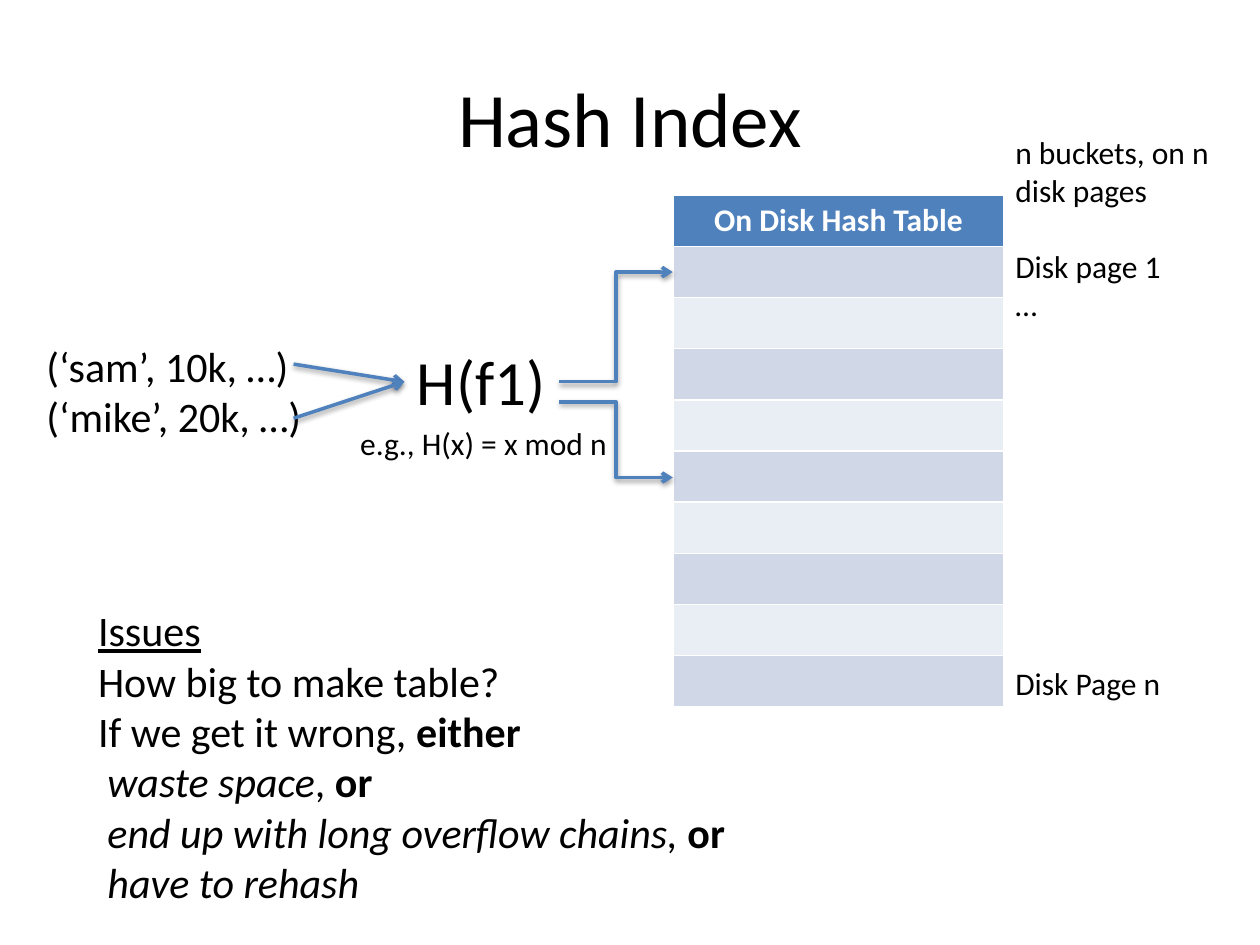
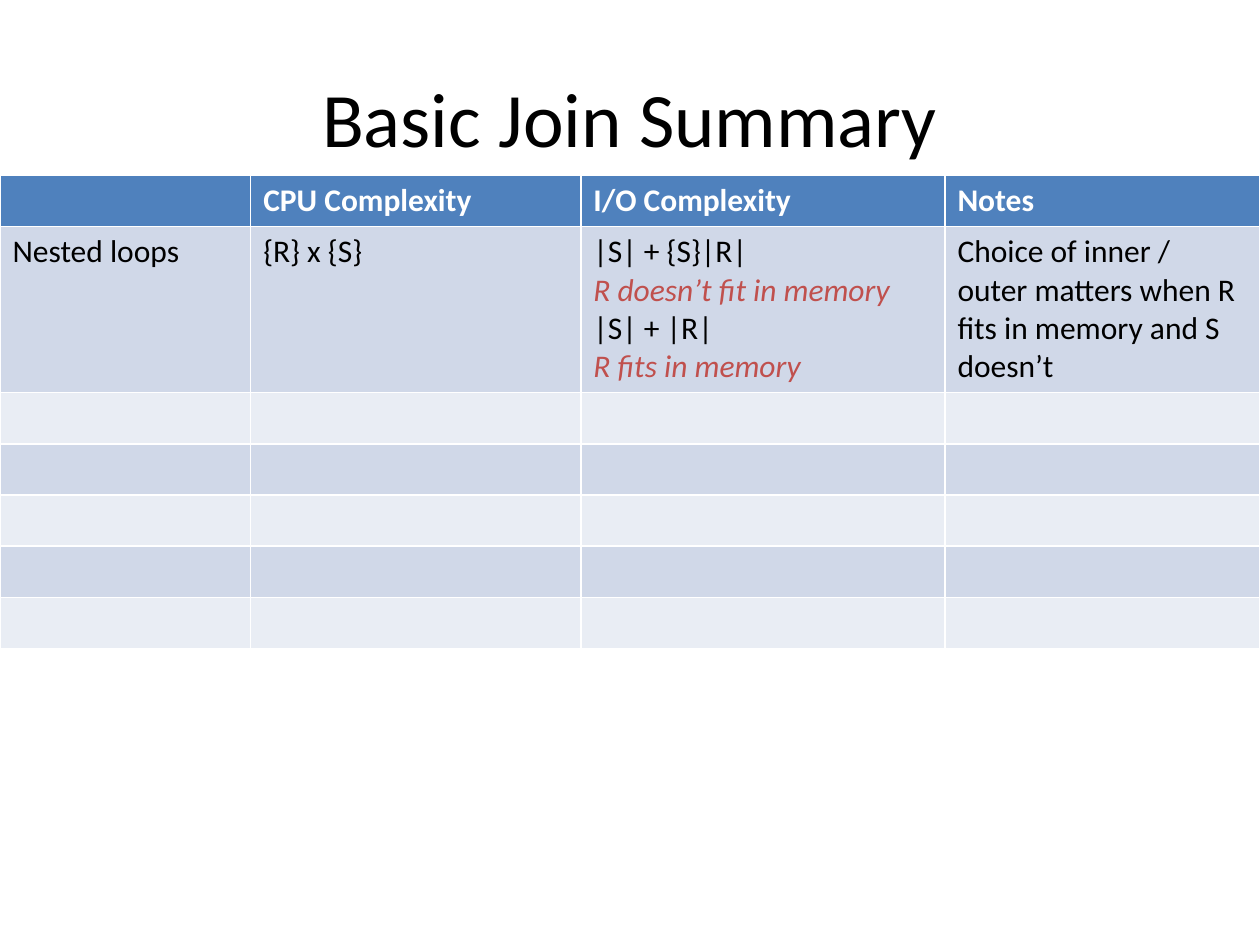
from dataclasses import dataclass

from lxml import etree
from pptx import Presentation
from pptx.dml.color import RGBColor
from pptx.enum.shapes import MSO_CONNECTOR
from pptx.enum.text import PP_ALIGN
from pptx.oxml.ns import qn
from pptx.util import Inches, Pt

STRAIGHT, ELBOW = MSO_CONNECTOR.STRAIGHT, MSO_CONNECTOR.ELBOW
LEFT, CENTER = PP_ALIGN.LEFT, PP_ALIGN.CENTER
TITLE_ONLY = 5
GRID_COLUMNS, GRID_ROWS = 100, 75


@dataclass(frozen=True)
class Theme:
    font: str = "Calibri"
    ink: str = "000000"
    white: str = "FFFFFF"
    accent: str = "4F81BD"
    alert: str = "C0504D"
    bands: tuple = ("D0D8E8", "E9EDF4")
    title: int = 44
    formula: int = 36
    body: int = 24
    label: int = 18
    line: int = 2


@dataclass(frozen=True)
class Span:
    text: str
    bold: bool = False
    italic: bool = False
    underline: bool = False
    color: str = ""


@dataclass(frozen=True)
class Para:
    spans: tuple
    before: float = 0
    indent: float = 0


def plain(text, **layout):
    return Para((Span(text),), **layout)


class Deck:
    def __init__(self, theme):
        self.theme = theme
        self.file = Presentation()
        self.file.slide_width, self.file.slide_height = Inches(10), Inches(7.5)
        self.page = None

    def x(self, columns):
        return round(self.file.slide_width * columns / GRID_COLUMNS)

    def y(self, rows):
        return round(self.file.slide_height * rows / GRID_ROWS)

    def area(self, left, top, width, height):
        return self.x(left), self.y(top), self.x(width), self.y(height)

    def fill_text(self, frame, paras, size, color=None, align=LEFT):
        for index, source in enumerate(paras):
            para = frame.paragraphs[0] if index == 0 else frame.add_paragraph()
            para.alignment = align
            if source.before:
                para.space_before = Pt(source.before)
            if source.indent:
                para._p.get_or_add_pPr().set("marL", str(Pt(source.indent)))
            for span in source.spans:
                run = para.add_run()
                run.text = span.text
                font = run.font
                font.name, font.size = self.theme.font, Pt(size)
                font.bold, font.italic = span.bold, span.italic
                font.underline = span.underline
                font.color.rgb = RGBColor.from_string(
                    span.color or color or self.theme.ink)

    def add_page(self, title):
        layout = self.file.slide_layouts[TITLE_ONLY]
        self.page = self.file.slides.add_slide(layout)
        box = self.page.shapes.title
        box.left, box.top, box.width, box.height = self.area(5, 3, 90, 12.5)
        self.fill_text(box.text_frame, [plain(title)], self.theme.title, align=CENTER)

    def text(self, area, paras, size, wrap=True):
        box = self.page.shapes.add_textbox(*self.area(*area))
        box.text_frame.word_wrap = wrap
        self.fill_text(box.text_frame, paras, size)

    def table(self, left, top, widths, heights, header, body, header_align=LEFT):
        area = self.area(left, top, sum(widths), sum(heights))
        table = self.page.shapes.add_table(len(heights), len(widths), *area).table
        for column, width in zip(table.columns, widths):
            column.width = self.x(width)
        for row, height in zip(table.rows, heights):
            row.height = self.y(height)
        for index, row in enumerate(table.rows):
            fill = self.theme.bands[(index - 1) % 2] if index else self.theme.accent
            for cell in row.cells:
                cell.fill.solid()
                cell.fill.fore_color.rgb = RGBColor.from_string(fill)
        for column, heading in enumerate(header):
            if heading:
                self.fill_text(table.cell(0, column).text_frame,
                               [Para((Span(heading, bold=True),))],
                               self.theme.label, self.theme.white, header_align)
        for row, contents in enumerate(body, 1):
            for column, paras in enumerate(contents):
                self.fill_text(table.cell(row, column).text_frame, paras,
                               self.theme.label)

    def arrow(self, kind, start, end):
        arrow = self.page.shapes.add_connector(
            kind, self.x(start[0]), self.y(start[1]), self.x(end[0]), self.y(end[1]))
        arrow.line.color.rgb = RGBColor.from_string(self.theme.accent)
        arrow.line.width = Pt(self.theme.line)
        properties = arrow.element.spPr
        etree.SubElement(properties.find(qn("a:ln")), qn("a:tailEnd"), type="arrow")
        effects = etree.SubElement(properties, qn("a:effectLst"))
        shadow = etree.SubElement(effects, qn("a:outerShdw"), blurRad="40000",
                                  dist="20000", dir="5400000", rotWithShape="0")
        color = etree.SubElement(shadow, qn("a:srgbClr"), val=self.theme.ink)
        etree.SubElement(color, qn("a:alpha"), val="38000")


def hash_index(deck):
    theme = deck.theme
    deck.add_page("Hash Index")
    deck.table(53.4, 15.5, [26.3], [4.06] * 10, ["On Disk Hash Table"], [], CENTER)
    deck.text((79.6, 10.1, 18.1, 46.4), [
        plain("n buckets, on n disk pages"),
        plain("Disk page 1", before=22),
        plain("…"),
        plain("Disk Page n", before=195),
    ], theme.label)
    deck.text((32.1, 26.7, 12.3, 7.1), [plain("H(f1)")], theme.formula)
    deck.text((2.7, 26.5, 23.2, 9.1),
              [plain("(‘sam’, 10k, …)"), plain("(‘mike’, 20k, …)")], theme.body)

    for record_row in (28.9, 33.2):
        deck.arrow(STRAIGHT, (23.3, record_row), (32.1, 30.3))
    for hash_row, bucket_row in ((30.3, 21.6), (31.9, 37.9)):
        deck.arrow(ELBOW, (44.4, hash_row), (53.4, bucket_row))

    either_or = Span("or", bold=True)
    deck.text((6.8, 47.5, 53.3, 25.2), [
        Para((Span("Issues", underline=True),)),
        plain("How big to make table?"),
        Para((Span("If we get it wrong, "), Span("either", bold=True))),
        Para((Span("waste space", italic=True), Span(", "), either_or), indent=5.4),
        Para((Span("end up with long overflow chains, ", italic=True), either_or),
             indent=5.4),
        Para((Span("have to rehash", italic=True),), indent=5.4),
    ], theme.body)
    deck.text((27.6, 33.2, 21.8, 4), [plain("e.g., H(x) = x mod n")],
              theme.label, wrap=False)


def join_summary(deck):
    def condition(text):
        return Para((Span(text, italic=True, color=deck.theme.alert),))

    deck.add_page("Basic Join Summary")
    nested_loops = [
        [plain("Nested loops")],
        [plain("{R} x {S}")],
        [plain("|S| + {S}|R|"), condition("R doesn’t fit in memory"),
         plain("|S| + |R|"), condition("R fits in memory")],
        [plain("Choice of inner / outer matters when R fits in memory "
               "and S doesn’t")],
    ]
    deck.table(0, 13.9, [19.9, 26.2, 28.9, 25], [4.06, 13] + [4.06] * 5,
               ["", "CPU Complexity", "I/O Complexity", "Notes"], [nested_loops])


def main():
    deck = Deck(Theme())
    hash_index(deck)
    join_summary(deck)
    deck.file.save("out.pptx")


if __name__ == "__main__":
    main()
